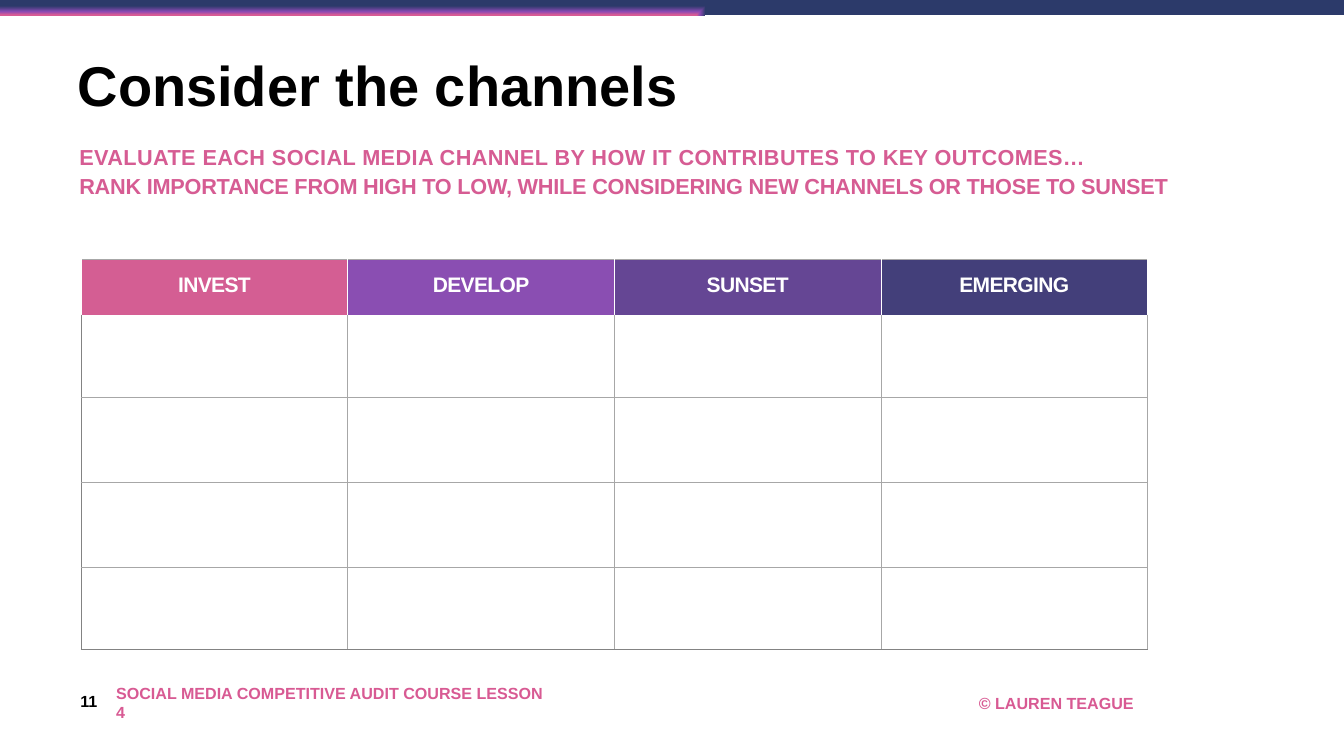
from dataclasses import dataclass

from lxml import etree
from pptx import Presentation
from pptx.dml.color import RGBColor
from pptx.enum.shapes import MSO_SHAPE
from pptx.enum.text import MSO_ANCHOR, MSO_AUTO_SIZE, PP_ALIGN
from pptx.oxml.ns import qn
from pptx.util import Pt

RECTANGLE = MSO_SHAPE.RECTANGLE
TOP, MIDDLE = MSO_ANCHOR.TOP, MSO_ANCHOR.MIDDLE
LEFT, CENTER = PP_ALIGN.LEFT, PP_ALIGN.CENTER
NO_AUTOFIT = MSO_AUTO_SIZE.NONE


@dataclass(frozen=True)
class Theme:
    font: str = "Arial"
    black: str = "000000"
    white: str = "FFFFFF"
    pink: str = "D65C93"
    footer_pink: str = "D85A93"
    grid: str = "A7A7A7"
    grid_edge: str = "838383"
    header_fills: tuple = ("D45E93", "8A4EB2", "654694", "433F7A")
    bar_stops: tuple = ((1, "D85B94"), (34, "8B4AB4"), (93, "2C3A6A"))
    title_size: int = 80
    subtitle_size: int = 31
    header_size: int = 30
    footer_size: int = 23


def add_element(parent, tag, **attributes):
    element = etree.SubElement(parent, qn(tag))
    for name, value in attributes.items():
        element.set(name, str(value))
    return element


def write_text(paragraph, text, *, font, size, color, align=LEFT, line_spacing=1.0, tracking=0):
    """Add one bold run; tracking is letter spacing in points."""
    paragraph.alignment = align
    paragraph.line_spacing = line_spacing
    run = paragraph.add_run()
    run.text = text
    run.font.name = font
    run.font.size = Pt(size)
    run.font.bold = True
    run.font.color.rgb = RGBColor.from_string(color)
    if tracking:
        run.font._element.set("spc", str(round(tracking * 100)))


def set_frame(frame, inset, anchor):
    frame.word_wrap = True
    frame.auto_size = NO_AUTOFIT
    frame.vertical_anchor = anchor
    frame.margin_left = frame.margin_right = Pt(inset)
    frame.margin_top = frame.margin_bottom = Pt(inset)


def set_borders(cell, **colors):
    """Draw 1 pt cell borders; keys are L, R, T and B in schema order."""
    properties = cell._tc.get_or_add_tcPr()
    for index, (side, color) in enumerate(colors.items()):
        line = add_element(properties, f"a:ln{side}", w=Pt(1))
        add_element(add_element(line, "a:solidFill"), "a:srgbClr", val=color)
        properties.insert(index, line)


class SlideBuilder:
    def __init__(self, slide, theme):
        self.slide = slide
        self.theme = theme

    def add_gradient_bar(self, left, top, width, height, stops, focus):
        """Add a bar whose gradient spreads out from the focus, in percent."""
        bar = self.slide.shapes.add_shape(RECTANGLE, Pt(left), Pt(top), Pt(width), Pt(height))
        bar.shadow.inherit = False
        bar.line.fill.background()
        bar.fill.background()
        gradient = etree.Element(qn("a:gradFill"), rotWithShape="1")
        stop_list = add_element(gradient, "a:gsLst")
        for position, color in stops:
            stop = add_element(stop_list, "a:gs", pos=position * 1000)
            add_element(stop, "a:srgbClr", val=color)
        spread = add_element(gradient, "a:path", path="shape")
        add_element(spread, "a:fillToRect",
                    **{side: percent * 1000 for side, percent in zip("ltrb", focus)})
        properties = bar._element.spPr
        properties.replace(properties.find(qn("a:noFill")), gradient)

    def add_title(self, text, left, top, width, height):
        title = self.slide.shapes.title
        title.left, title.top = Pt(left), Pt(top)
        title.width, title.height = Pt(width), Pt(height)
        set_frame(title.text_frame, 3.6, TOP)
        write_text(title.text_frame.paragraphs[0], text, font=self.theme.font,
                   size=self.theme.title_size, color=self.theme.black, line_spacing=0.8)

    def add_text(self, lines, left, top, width, height, *, size, color,
                 anchor=MIDDLE, line_spacing=1.0):
        """Add a text box from (text, tracking) lines."""
        box = self.slide.shapes.add_textbox(Pt(left), Pt(top), Pt(width), Pt(height))
        frame = box.text_frame
        set_frame(frame, 6, anchor)
        for index, (text, tracking) in enumerate(lines):
            paragraph = frame.add_paragraph() if index else frame.paragraphs[0]
            write_text(paragraph, text, font=self.theme.font, size=size, color=color,
                       line_spacing=line_spacing, tracking=tracking)

    def add_channel_table(self, headers, left, top, column_width, row_heights):
        theme = self.theme
        shape = self.slide.shapes.add_table(
            len(row_heights), len(headers), Pt(left), Pt(top),
            Pt(column_width * len(headers)), Pt(sum(row_heights)))
        table = shape.table
        table.first_row = table.horz_banding = False
        for column in table.columns:
            column.width = Pt(column_width)
        for row, height in zip(table.rows, row_heights):
            row.height = Pt(height)

        for column, (header, fill) in enumerate(zip(headers, theme.header_fills)):
            cell = table.cell(0, column)
            cell.vertical_anchor = MIDDLE
            cell.margin_left = cell.margin_right = Pt(4)
            cell.margin_top = cell.margin_bottom = Pt(4)
            cell.fill.solid()
            cell.fill.fore_color.rgb = RGBColor.from_string(fill)
            write_text(cell.text_frame.paragraphs[0], header, font=theme.font,
                       size=theme.header_size, color=theme.white, align=CENTER,
                       line_spacing=0.8, tracking=-0.9)
            set_borders(cell, L=theme.white, R=theme.white, T=theme.grid, B=theme.white)

        last_row = len(row_heights) - 1
        for row in range(1, last_row + 1):
            for column in range(len(headers)):
                cell = table.cell(row, column)
                cell.fill.background()
                set_borders(cell,
                            L=theme.grid if column else theme.grid_edge,
                            R=theme.grid,
                            T=theme.white if row == 1 else theme.grid,
                            B=theme.grid_edge if row == last_row else theme.grid)


def main():
    theme = Theme()
    presentation = Presentation()
    presentation.slide_width, presentation.slide_height = Pt(1920.24), Pt(1080)
    slide = presentation.slides.add_slide(presentation.slide_layouts[5])
    builder = SlideBuilder(slide, theme)

    builder.add_gradient_bar(-6.5, -5.8, 1932.5, 27.4, theme.bar_stops, (6, 99, 94, 1))
    builder.add_title("Consider the channels", 107.3, 87.8, 1745.3, 119.5)
    builder.add_text(
        [("EVALUATE EACH SOCIAL MEDIA CHANNEL BY HOW IT CONTRIBUTES TO KEY OUTCOMES…", 0.6),
         ("RANK IMPORTANCE FROM HIGH TO LOW, WHILE CONSIDERING NEW CHANNELS OR THOSE TO SUNSET",
          -0.3)],
        107.3, 195.8, 1745.3, 188, size=theme.subtitle_size, color=theme.pink,
        anchor=TOP, line_spacing=1.1)
    builder.add_channel_table(["INVEST", "DEVELOP", "SUNSET", "EMERGING"],
                              116, 370, 380.9, [80, 118, 121, 121, 118])

    footers = [
        ("11", 108.7, 983.5, 52.6, theme.black),
        ("SOCIAL MEDIA COMPETITIVE AUDIT COURSE LESSON 4", 159.8, 985, 641.5, theme.footer_pink),
        ("© LAUREN TEAGUE", 1392.5, 985, 239.8, theme.footer_pink),
    ]
    for text, left, top, width, color in footers:
        builder.add_text([(text, 0)], left, top, width, 37.4,
                         size=theme.footer_size, color=color)

    presentation.save("out.pptx")


if __name__ == "__main__":
    main()
